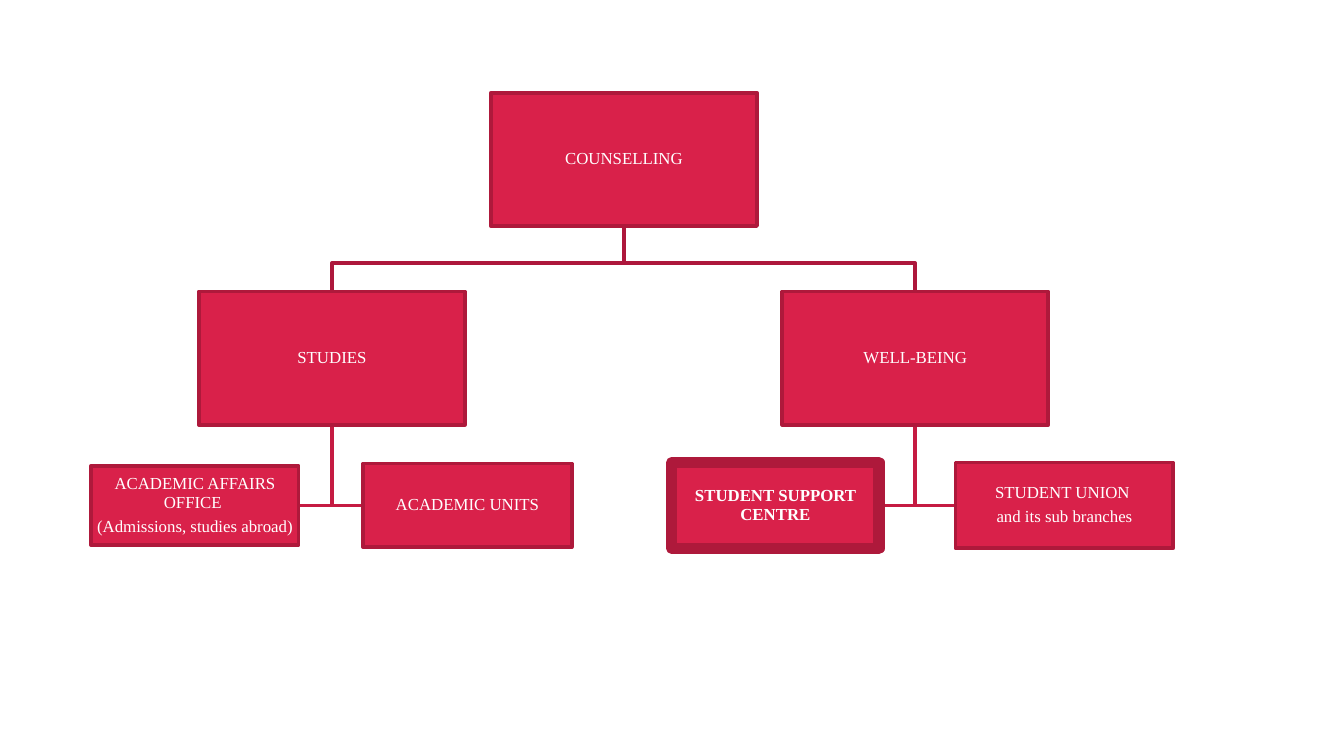
"""Builds a counselling organisation chart on one slide."""
from dataclasses import dataclass

from pptx import Presentation
from pptx.dml.color import RGBColor
from pptx.enum.shapes import MSO_SHAPE
from pptx.enum.text import MSO_ANCHOR, PP_ALIGN
from pptx.util import Pt


@dataclass(frozen=True)
class Theme:
    font: str = "Times New Roman"
    size: float = 9
    text: str = "FFFFFF"
    fill: str = "D9214A"
    border: str = "AE193B"
    main_link: str = "AD173C"
    leaf_link: str = "C51B42"
    line: float = 2
    heavy_line: float = 6


@dataclass(frozen=True)
class Node:
    center: float
    middle: float
    width: float
    height: float
    lines: tuple
    strong: bool = False

    @property
    def left(self):
        return self.center - self.width / 2

    @property
    def top(self):
        return self.middle - self.height / 2

    @property
    def bottom(self):
        return self.middle + self.height / 2


class ChartPage:
    def __init__(self, page, theme):
        self.page = page
        self.theme = theme

    def link(self, points, color):
        (start_x, start_y), *rest = [(Pt(x), Pt(y)) for x, y in points]
        builder = self.page.shapes.build_freeform(start_x, start_y)
        builder.add_line_segments(rest, close=False)
        elbow = builder.convert_to_shape()
        elbow.shadow.inherit = False
        elbow.fill.background()
        elbow.line.color.rgb = RGBColor.from_string(color)
        elbow.line.width = Pt(self.theme.line)

    def branch(self, parent, child):
        bend = parent.bottom + 20
        self.link([(parent.center, parent.bottom), (parent.center, bend),
                   (child.center, bend), (child.center, child.top)],
                  self.theme.main_link)

    def side_branch(self, parent, leaf):
        side = leaf.left if leaf.center > parent.center else leaf.left + leaf.width
        self.link([(parent.center, parent.bottom), (parent.center, leaf.middle),
                   (side, leaf.middle)], self.theme.leaf_link)

    def box(self, node):
        theme = self.theme
        box = self.page.shapes.add_shape(
            MSO_SHAPE.RECTANGLE, Pt(node.left), Pt(node.top), Pt(node.width), Pt(node.height))
        box.shadow.inherit = False
        box.fill.solid()
        box.fill.fore_color.rgb = RGBColor.from_string(theme.fill)
        box.line.color.rgb = RGBColor.from_string(theme.border)
        box.line.width = Pt(theme.heavy_line if node.strong else theme.line)
        frame = box.text_frame
        frame.word_wrap = True
        frame.vertical_anchor = MSO_ANCHOR.MIDDLE
        frame.margin_left = frame.margin_right = Pt(0.5)
        frame.margin_top = frame.margin_bottom = Pt(0.5)
        for index, line in enumerate(node.lines):
            para = frame.add_paragraph() if index else frame.paragraphs[0]
            para.alignment = PP_ALIGN.CENTER
            para.line_spacing = 0.9
            para.space_before = Pt(3.1 if index else 0)
            span = para.add_run()
            span.text = line
            span.font.name = theme.font
            span.font.size = Pt(theme.size)
            span.font.bold = node.strong
            span.font.color.rgb = RGBColor.from_string(theme.text)


def main():
    deck = Presentation()
    deck.slide_width, deck.slide_height = Pt(720), Pt(405)
    chart = ChartPage(deck.slides.add_slide(deck.slide_layouts[6]), Theme())

    width, height, leaf_row = 142.6, 71.4, 270.8
    root = Node(334.2, 85.4, width, height, ("COUNSELLING",))
    studies = Node(177.8, 191.9, width, height, ("STUDIES",))
    well_being = Node(490.3, 191.9, width, height, ("WELL-BEING",))
    office = Node(104.4, leaf_row, 111, 42.6,
                  ("ACADEMIC AFFAIRS OFFICE ", "(Admissions, studies abroad)"))
    units = Node(250.4, leaf_row, 111.8, 44.8, ("ACADEMIC UNITS",))
    support = Node(415.4, leaf_row, 111, 46, ("STUDENT SUPPORT CENTRE",), True)
    union = Node(570.2, leaf_row, 116.6, 46, ("STUDENT UNION ", "and its sub branches"))
    tree = {studies: (office, units), well_being: (support, union)}

    for area, leaves in tree.items():
        chart.branch(root, area)
        for leaf in leaves:
            chart.side_branch(area, leaf)
    chart.box(root)
    for area, leaves in tree.items():
        for node in (area, *leaves):
            chart.box(node)
    deck.save("out.pptx")


if __name__ == "__main__":
    main()
